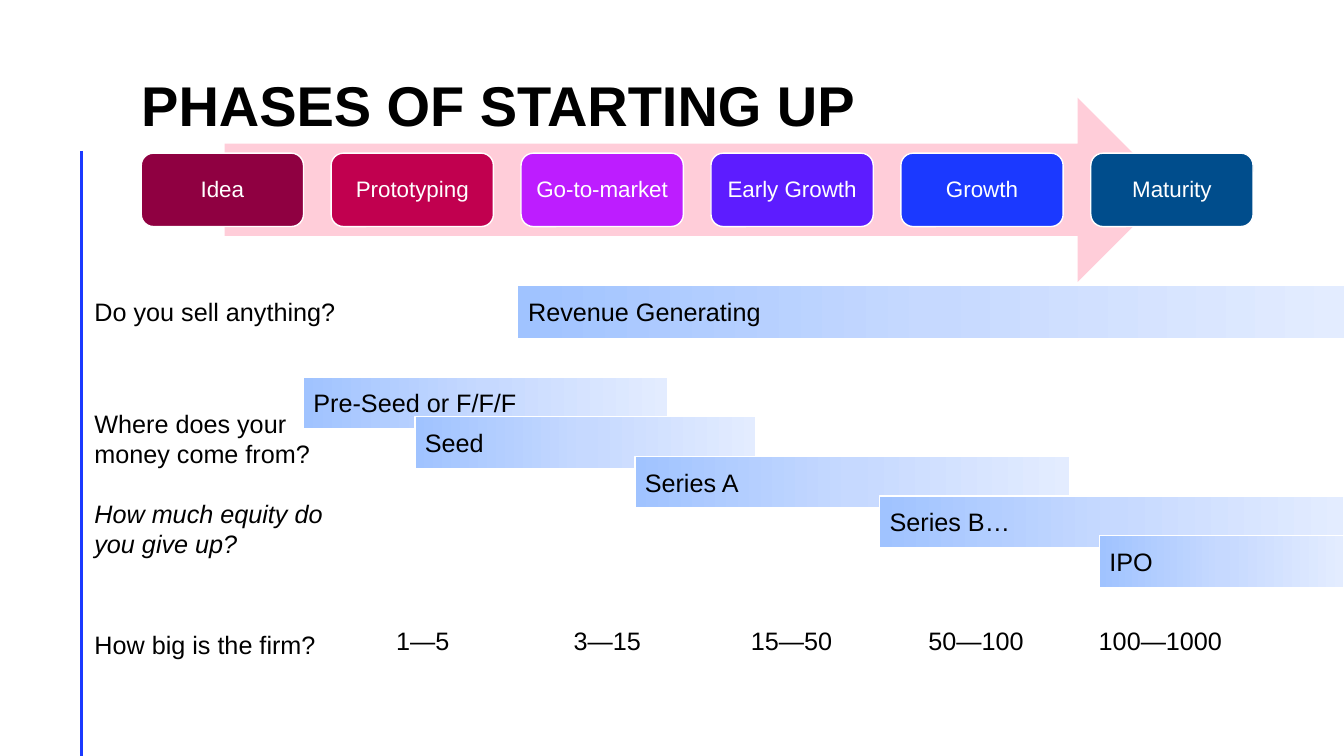
import copy

import pptx
import pptx.util
import pptx.dml.color
import pptx.enum.shapes
import pptx.enum.text
from pptx.util import Cm

SLIDE_WIDTH, SLIDE_HEIGHT = 33.87, 19.05
BAR_HEIGHT = 1.3
COLORS = {
    "text": "000000", "white": "FFFFFF", "rule": "1B39FF", "arrow": "FFCDD9",
    "bar_start": "A0C3FF", "bar_middle": "C6D9FF", "bar_end": "E3ECFF",
    "idea": "8F0041", "prototyping": "C1004F", "market": "BD1DFF",
    "early": "5D1CFF", "growth": "1B39FF", "maturity": "004D8C",
}
PHASES = [
    ("Idea", "idea"), ("Prototyping", "prototyping"), ("Go-to-market", "market"),
    ("Early Growth", "early"), ("Growth", "growth"), ("Maturity", "maturity"),
]
# Label, left and right edge in cm
FUNDING = [
    ("Pre-Seed or F/F/F", 7.65, 16.84), ("Seed", 10.46, 19.05),
    ("Series A", 16.0, 26.97), ("Series B…", 22.17, SLIDE_WIDTH),
    ("IPO", 27.71, SLIDE_WIDTH),
]
FIRM_SIZES = ["1—5", "3—15", "15—50", "50—100", "100—1000"]

SHAPES = pptx.enum.shapes.MSO_SHAPE
ALIGN = pptx.enum.text.PP_ALIGN
ANCHOR = pptx.enum.text.MSO_ANCHOR


def rgb(name):
    return pptx.dml.color.RGBColor.from_string(COLORS[name])


def write(frame, lines, size=18, color="text", align=ALIGN.LEFT, anchor=ANCHOR.MIDDLE):
    """Fill a text frame with one paragraph per line and return the paragraphs."""
    frame.word_wrap = True
    frame.vertical_anchor = anchor
    frame.text = "\n".join(lines)
    for paragraph in frame.paragraphs:
        paragraph.alignment = align
        paragraph.font.name = "Arial"
        paragraph.font.size = pptx.util.Pt(size)
        paragraph.font.color.rgb = rgb(color)
    return frame.paragraphs


def add_block(slide, kind, left, top, width, height, outlined=True):
    block = slide.shapes.add_shape(kind, Cm(left), Cm(top), Cm(width), Cm(height))
    block.shadow.inherit = False
    if outlined:
        block.line.color.rgb = rgb("white")
        block.line.width = pptx.util.Pt(1)
    else:
        block.line.fill.background()
    return block


def add_side_rule(slide, x, top, bottom):
    rule = slide.shapes.add_connector(
        pptx.enum.shapes.MSO_CONNECTOR.STRAIGHT, Cm(x), Cm(top), Cm(x), Cm(bottom))
    rule.line.color.rgb = rgb("rule")
    rule.line.width = pptx.util.Pt(2)
    rule._element.spPr.append(pptx.oxml.parse_xml(
        '<a:effectLst xmlns:a="http://schemas.openxmlformats.org/drawingml/2006/main"/>'))


def add_title(slide, left, top, width, height):
    frame = slide.shapes.add_textbox(Cm(left), Cm(top), Cm(width), Cm(height)).text_frame
    frame.margin_left = frame.margin_right = frame.margin_top = frame.margin_bottom = 0
    title = write(frame, ["PHASES OF STARTING UP"], 40, anchor=ANCHOR.BOTTOM)[0]
    title.font.bold = True
    title.line_spacing = pptx.util.Pt(40)


def add_question(slide, lines, left, top, width, height):
    box = slide.shapes.add_textbox(Cm(left), Cm(top), Cm(width), Cm(height))
    return write(box.text_frame, lines)


def add_bar(slide, label, left, top, right, outlined=True):
    """Draw a bar that fades to the right."""
    bar = add_block(slide, SHAPES.RECTANGLE, left, top, right - left, BAR_HEIGHT, outlined)
    bar.fill.gradient()
    bar.fill.gradient_angle = 0
    first_stop = bar.fill.gradient_stops[0]._gs
    first_stop.addnext(copy.deepcopy(first_stop))
    stops = zip(bar.fill.gradient_stops, ("bar_start", "bar_middle", "bar_end"))
    for index, (stop, color) in enumerate(stops):
        stop.position = index / 2
        stop.color.rgb = rgb(color)
    write(bar.text_frame, [label])


def add_funding(slide, top, step):
    for index, (label, left, right) in enumerate(FUNDING):
        add_bar(slide, label, left, top + index * step, right)


def add_phases(slide, left, top, width, height):
    """Draw the phases in a row, over an arrow that starts and ends inside it."""
    arrow_inset, arrow_height = 2.1, 4.65
    arrow = add_block(slide, SHAPES.RIGHT_ARROW, left + arrow_inset,
                      top + (height - arrow_height) / 2,
                      width - 2 * arrow_inset, arrow_height, outlined=False)
    arrow.fill.solid()
    arrow.fill.fore_color.rgb = rgb("arrow")

    phase_width = 4.09
    pitch = (width - phase_width) / (len(PHASES) - 1)
    for index, (label, color) in enumerate(PHASES):
        phase = add_block(slide, SHAPES.ROUNDED_RECTANGLE,
                          left + index * pitch, top, phase_width, height)
        phase.fill.solid()
        phase.fill.fore_color.rgb = rgb(color)
        frame = phase.text_frame
        frame.margin_left = frame.margin_right = Cm(0.17)
        write(frame, [label], 16, "white", ALIGN.CENTER)[0].line_spacing = 0.9


def add_firm_sizes(slide, left, top, width, height):
    table = slide.shapes.add_table(
        1, len(FIRM_SIZES), Cm(left), Cm(top), Cm(width), Cm(height)).table
    table.first_row = table.horz_banding = False
    for cell, size in zip(table.rows[0].cells, FIRM_SIZES):
        cell.fill.background()
        write(cell.text_frame, [size], align=ALIGN.CENTER, anchor=ANCHOR.TOP)


def build_phases_slide(slide):
    question_left = 2.13
    add_side_rule(slide, 2.06, 3.8, SLIDE_HEIGHT)
    add_title(slide, 3.56, -0.1, 28.02, 3.56)
    add_phases(slide, 3.56, 3.86, 28.02, 1.85)

    add_question(slide, ["Do you sell anything?"], question_left, 7.21, 7.82, BAR_HEIGHT)
    add_bar(slide, "Revenue Generating", 13.06, 7.21, SLIDE_WIDTH, outlined=False)

    add_funding(slide, top=9.5, step=1.0)
    equity = add_question(
        slide, ["Where does your money come from?", "How much equity do you give up?"],
        question_left, 9.53, 6.78, 5.31)[1]
    equity.font.italic = True
    equity.space_before = pptx.util.Pt(21)

    add_question(slide, ["How big is the firm?"], question_left, 14.78, 6.78, 2.9)
    add_firm_sizes(slide, 8.33, 15.7, 23.24, 1.04)


def main():
    deck = pptx.Presentation()
    deck.slide_width, deck.slide_height = Cm(SLIDE_WIDTH), Cm(SLIDE_HEIGHT)
    build_phases_slide(deck.slides.add_slide(deck.slide_layouts[6]))
    deck.save("out.pptx")


if __name__ == "__main__":
    main()
